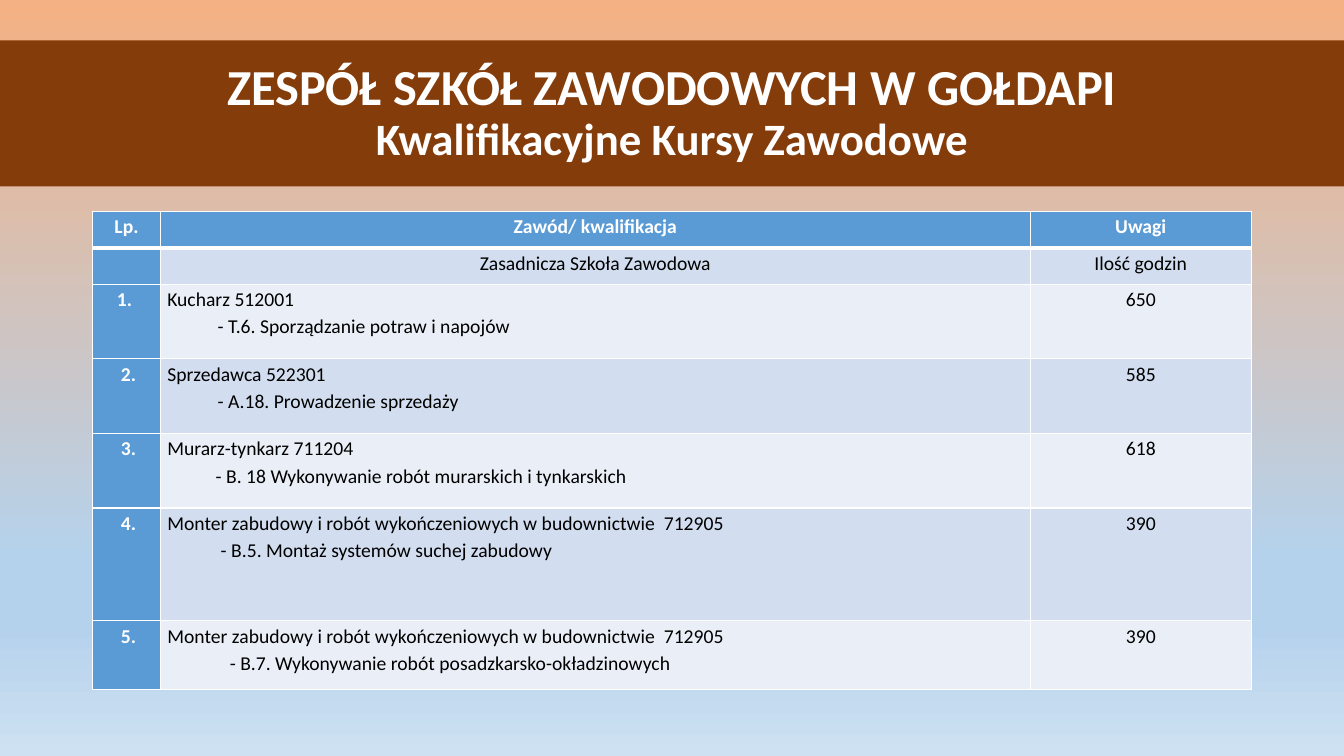
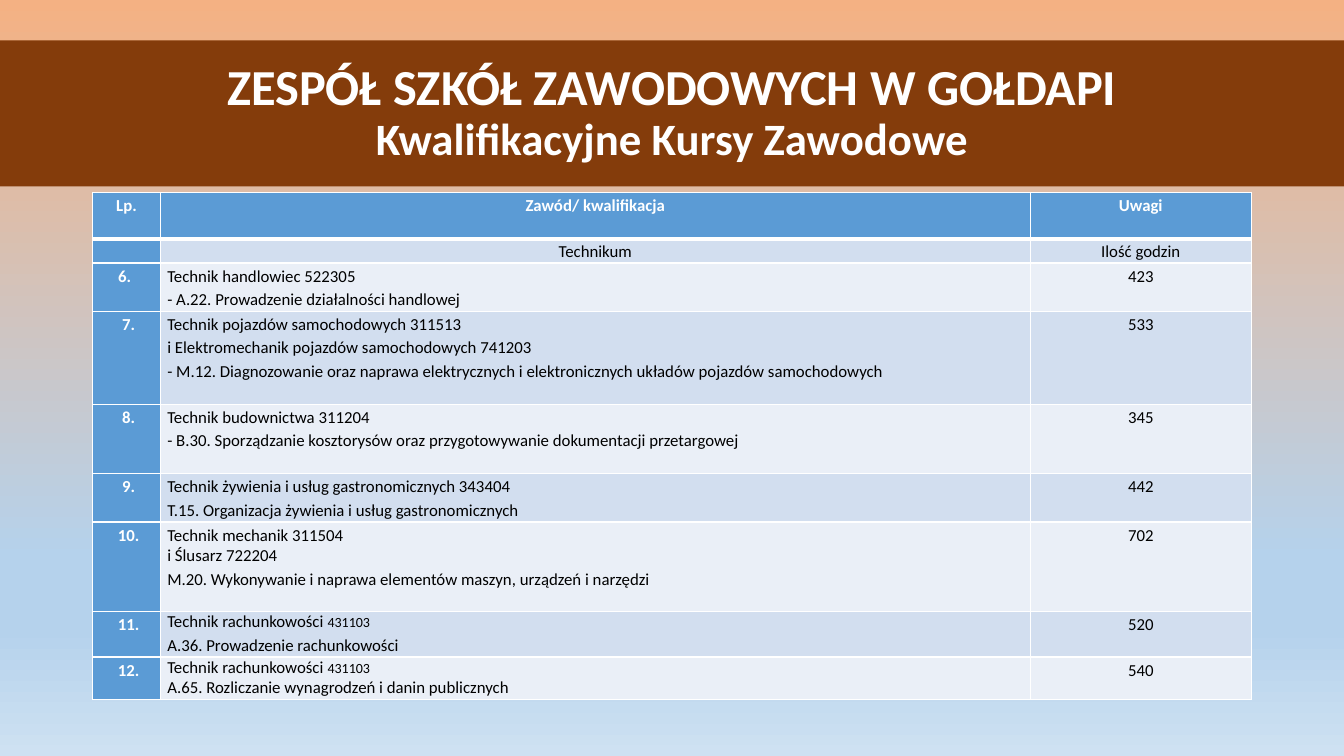
from collections import namedtuple
from lxml.etree import SubElement
from pptx import Presentation
from pptx.dml.color import RGBColor
from pptx.enum.text import MSO_ANCHOR, MSO_AUTO_SIZE, PP_ALIGN
from pptx.oxml.ns import qn
from pptx.util import Inches, Pt

W, H = 13.33, 7.5
FONT = "Calibri"
WHITE, BLACK, BROWN, BLUE = "FFFFFF", "000000", "843C0B", "5B9BD5"
BANDS = ["D2DEEF", "EAEFF7"]
SKY = [(0, "F4B183"), (74, "B5D2EC"), (83, "B5D2EC"), (100, "CEE1F2")]
TITLE = [("ZESPÓŁ SZKÓŁ ZAWODOWYCH W GOŁDAPI", 36), ("Kwalifikacyjne Kursy Zawodowe", 32)]
HEADER = ["Lp.", "Zawód/ kwalifikacja", "Uwagi"]
HOURS = "Ilość godzin"
COLS = [0.67, 8.63, 2.19]
INSET, NUDGE = 0.07, 0.04

Line = namedtuple("Line", "text spacing indent code", defaults=(1.15, 0, ""))
Course = namedtuple("Course", "height hours lines")
Page = namedtuple("Page", "school top size heads first courses")

PAGES = [
    Page("Zasadnicza Szkoła Zawodowa", 2.1, 14, [0.36, 0.36], 1, [
        Course(0.74, "650", [Line("Kucharz 512001"),
                             Line("- T.6. Sporządzanie potraw i napojów", indent=0.5)]),
        Course(0.74, "585", [Line("Sprzedawca 522301"),
                             Line("- A.18. Prowadzenie sprzedaży", indent=0.5)]),
        Course(0.74, "618", [Line("Murarz-tynkarz 711204"),
                             Line("- B. 18 Wykonywanie robót murarskich i tynkarskich", indent=0.48)]),
        Course(1.12, "390", [Line("Monter zabudowy i robót wykończeniowych w budownictwie  712905"),
                             Line("- B.5. Montaż systemów suchej zabudowy", indent=0.53)]),
        Course(0.68, "390", [Line("Monter zabudowy i robót wykończeniowych w budownictwie  712905"),
                             Line("- B.7. Wykonywanie robót posadzkarsko-okładzinowych", indent=0.62)]),
    ]),
    Page("Technikum", 1.91, 12, [0.46, 0.24], 6, [
        Course(0.48, "423", [Line("Technik handlowiec 522305"),
                             Line("- A.22. Prowadzenie działalności handlowej")]),
        Course(0.92, "533", [Line("Technik pojazdów samochodowych 311513"),
                             Line("i Elektromechanik pojazdów samochodowych 741203"),
                             Line("- M.12. Diagnozowanie oraz naprawa elektrycznych i elektronicznych "
                                  "układów pojazdów samochodowych")]),
        Course(0.69, "345", [Line("Technik budownictwa 311204"),
                             Line("- B.30. Sporządzanie kosztorysów oraz przygotowywanie "
                                  "dokumentacji przetargowej")]),
        Course(0.48, "442", [Line("Technik żywienia i usług gastronomicznych 343404"),
                             Line("T.15. Organizacja żywienia i usług gastronomicznych")]),
        Course(0.89, "702", [Line("Technik mechanik 311504"),
                             Line("i Ślusarz 722204", 1),
                             Line("M.20. Wykonywanie i naprawa elementów maszyn, urządzeń i narzędzi")]),
        Course(0.45, "520", [Line("Technik rachunkowości ", 1, code="431103"),
                             Line("A.36. Prowadzenie rachunkowości")]),
        Course(0.42, "540", [Line("Technik rachunkowości ", 1, code="431103"),
                             Line("A.65. Rozliczanie wynagrodzeń i danin publicznych", 1)]),
    ]),
]


def rgb(color):
    return RGBColor.from_string(color)


def paint(shape, color):
    shape.fill.solid()
    shape.fill.fore_color.rgb = rgb(color)


def add_run(p, text, size, color, bold):
    r = p.add_run()
    r.text = text
    for name, value in {"name": FONT, "size": Pt(size), "bold": bold}.items():
        setattr(r.font, name, value)
    r.font.color.rgb = rgb(color)


def paint_sky(master):
    fill = master.background.fill
    fill.gradient()
    fill.gradient_angle = 270
    stops = master.element.find(".//" + qn("a:gsLst"))
    for stop in list(stops):
        stops.remove(stop)
    for share, color in SKY:
        stop = SubElement(stops, qn("a:gs"), pos=str(share * 1000))
        SubElement(stop, qn("a:srgbClr"), val=color)


def add_title(s):
    sp = s.shapes.title
    box = {"left": 0, "top": 0.4, "width": W, "height": 1.45}
    for name, value in box.items():
        setattr(sp, name, Inches(value))
    paint(sp, BROWN)
    tf = sp.text_frame
    tf.vertical_anchor = MSO_ANCHOR.MIDDLE
    tf.auto_size = MSO_AUTO_SIZE.NONE
    p = tf.paragraphs[0]
    p.alignment, p.line_spacing = PP_ALIGN.CENTER, 0.9
    for i, (text, size) in enumerate(TITLE):
        if i:
            p.add_line_break()
            SubElement(p._p.find(qn("a:br")), qn("a:rPr"), sz=str(TITLE[0][1] * 100))
        add_run(p, text, size, WHITE, True)


def add_border(cell, side, width):
    ln = SubElement(cell._tc.get_or_add_tcPr(), qn("a:ln" + side), w=str(Pt(width)))
    SubElement(SubElement(ln, qn("a:solidFill")), qn("a:srgbClr"), val=WHITE)


def fill_cell(cell, lines, row, col, size):
    head = row == 0 or col == 0
    for name in ("left", "right", "top", "bottom"):
        inset = INSET if name in ("left", "right") else 0
        setattr(cell, "margin_" + name, Inches(inset))
    if col == 0 and row > 1:
        side = "margin_right" if row == 2 else "margin_left"
        setattr(cell, side, Inches(INSET + NUDGE))
    for side in "LRTB":
        thick = (row, side) in ((0, "B"), (1, "T"))
        add_border(cell, side, 3 if thick else 1)
    paint(cell, BLUE if head else BANDS[(row - 1) % 2])
    tf = cell.text_frame
    for i, line in enumerate(lines):
        p = tf.add_paragraph() if i else tf.paragraphs[0]
        p.line_spacing = line.spacing
        p.alignment = PP_ALIGN.LEFT if col == 1 and row > 1 else PP_ALIGN.CENTER
        if line.indent:
            p._p.get_or_add_pPr().set("marL", str(Inches(line.indent)))
        color = WHITE if head else BLACK
        add_run(p, line.text, size, color, head)
        if line.code:
            add_run(p, line.code, 10, color, head)
    if not lines:
        SubElement(tf.paragraphs[0]._p, qn("a:endParaRPr"), sz=str(size * 100))


def add_courses(s, page):
    heights = page.heads + [c.height for c in page.courses]
    rows = [[[Line(text)] for text in HEADER], [[], [Line(page.school)], [Line(HOURS)]]]
    for number, c in enumerate(page.courses, page.first):
        rows.append([[Line(f"{number}.")], c.lines, [Line(c.hours)]])
    box = ((W - sum(COLS)) / 2, page.top, sum(COLS), sum(heights))
    table = s.shapes.add_table(len(rows), len(COLS), *map(Inches, box)).table
    for column, width in zip(table.columns, COLS):
        column.width = Inches(width)
    for row, (cells, height) in enumerate(zip(rows, heights)):
        table.rows[row].height = Inches(height)
        for col, lines in enumerate(cells):
            fill_cell(table.cell(row, col), lines, row, col, page.size)


def main():
    prs = Presentation()
    prs.slide_width, prs.slide_height = Inches(W), Inches(H)
    paint_sky(prs.slide_master)
    for page in PAGES:
        s = prs.slides.add_slide(prs.slide_layouts[5])
        add_title(s)
        add_courses(s, page)
    prs.save("out.pptx")


if __name__ == "__main__":
    main()
